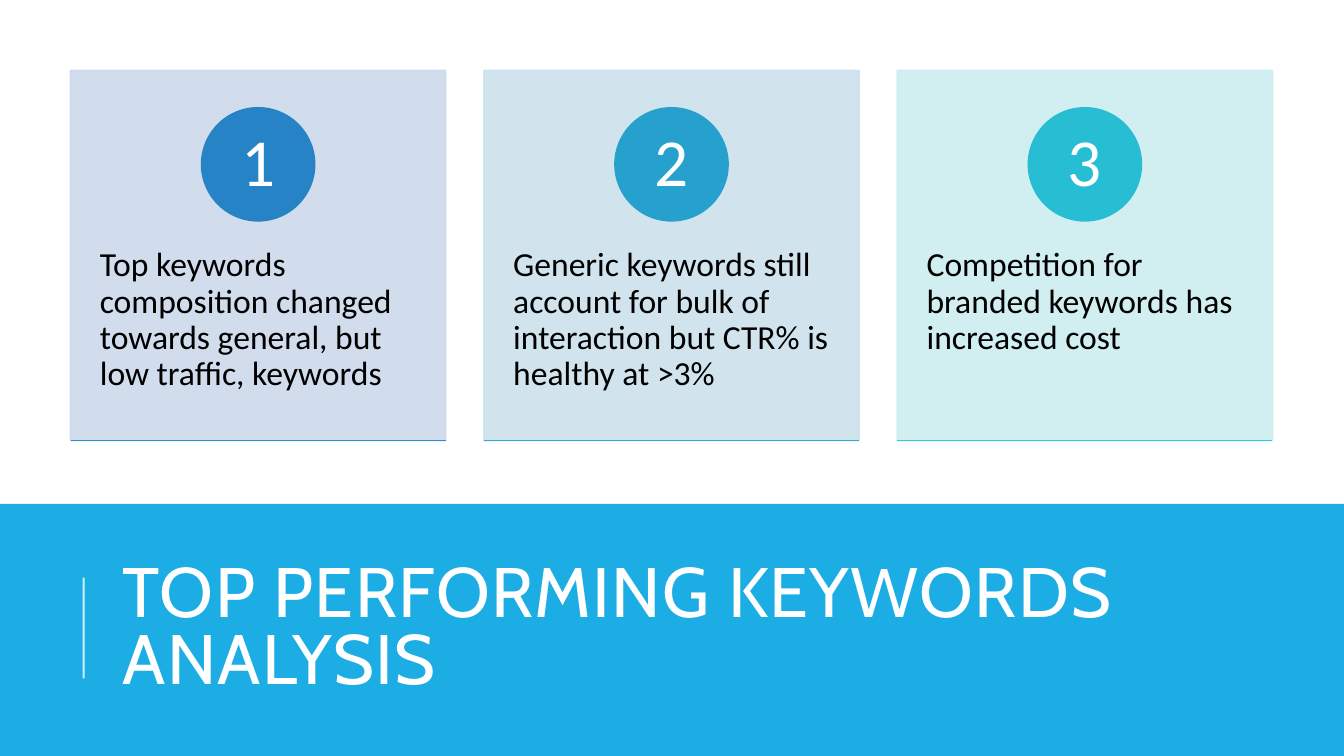
from dataclasses import dataclass

from lxml import etree
from pptx import Presentation
from pptx import util as u
from pptx.dml.color import RGBColor
from pptx.enum import shapes, text
from pptx.oxml.ns import qn


@dataclass(frozen=True)
class Theme:
    white: str = "FFFFFF"
    black: str = "000000"
    band: str = "1CADE4"
    heading_font: str = "Cabin"
    body_font: str = "Calibri"
    title_size: int = 50
    number_size: int = 48
    body_size: int = 24
    outline: float = 1.25
    divider: float = 1.5


CARDS = [  # text, card colour, circle colour, rule colour
    ("Top keywords composition changed towards general, but low traffic, keywords",
     "CDD9EA", "2683C6", "2691C9"),
    ("Generic keywords still account for bulk of interaction but CTR% is healthy at >3%",
     "CDE2ED", "26A0CD", "27AFD0"),
    ("Competition for branded keywords has increased cost",
     "CDEDF0", "27BED4", "27CED7"),
]

# All lengths are cells of a square grid, 75 rows to the slide's height.
ROWS, COLUMNS = 75, 133.33
MARGIN, PITCH = 7, 41
CARD_WIDTH, CARD_HEIGHT = 37.2, 36.7
CARD_INSETS = (2.9, 17.6, 2.9, 4.3)
CIRCLE_TOP, CIRCLE_SIZE = 10.7, 11.2
CIRCLE_INSETS = (0.9, 0.1, 0.9, 0.1)
BAND_TOP = 50


class SlideBuilder:
    def __init__(self, presentation, theme):
        self.theme = theme
        self.cell = presentation.slide_height / ROWS
        self.slide = presentation.slides.add_slide(presentation.slide_layouts[6])

    def cells(self, *lengths):
        return [u.Emu(round(length * self.cell)) for length in lengths]

    def paint(self, color_format, color, opacity=100):
        """Set a solid fill or line, with its opacity in percent."""
        color_format.solid()
        color_format.fore_color.rgb = RGBColor.from_string(color)
        if opacity < 100:
            element = color_format._xPr.find(qn("a:solidFill"))[0]
            etree.SubElement(element, qn("a:alpha"), val=str(opacity * 1000))

    def block(self, preset, box, color, opacity=100, outlined=True):
        shape = self.slide.shapes.add_shape(preset, *self.cells(*box))
        shape.shadow.inherit = False
        self.paint(shape.fill, color, opacity)
        if outlined:
            self.paint(shape.line.fill, color, opacity)
            shape.line.width = u.Pt(self.theme.outline)
        else:
            shape.line.fill.background()
        return shape

    def line(self, start, end, color, width, opacity=100):
        connector = self.slide.shapes.add_connector(
            shapes.MSO_CONNECTOR.STRAIGHT, *self.cells(*start, *end))
        self.paint(connector.line.fill, color, opacity)
        connector.line.width = u.Pt(width)
        etree.SubElement(connector._element.spPr, qn("a:effectLst"))

    def label(self, shape, words, font, size, color, insets, centred=False,
              anchor=text.MSO_ANCHOR.MIDDLE, line_spacing=0.9):
        frame = shape.text_frame
        frame.word_wrap = True
        frame.vertical_anchor = anchor
        (frame.margin_left, frame.margin_top,
         frame.margin_right, frame.margin_bottom) = self.cells(*insets)
        paragraph = frame.paragraphs[0]
        paragraph.alignment = text.PP_ALIGN.CENTER if centred else text.PP_ALIGN.LEFT
        paragraph.line_spacing = line_spacing
        run = paragraph.add_run()
        run.text = words
        run.font.name = font
        run.font.size = u.Pt(size)
        run.font.color.rgb = RGBColor.from_string(color)
        return run

    def title_band(self, words):
        theme = self.theme
        self.block(shapes.MSO_SHAPE.RECTANGLE,
                   (0, BAND_TOP, COLUMNS, ROWS - BAND_TOP), theme.band, outlined=False)
        self.line((8.3, 67.3), (8.3, 57.3), theme.white, theme.divider, opacity=80)
        title = self.slide.shapes.add_textbox(*self.cells(11.2, 54.4, 106.3, 16.4))
        run = self.label(title, words, theme.heading_font, theme.title_size,
                         theme.white, (1, 0.5, 1, 0.5), line_spacing=0.8)
        run.font._element.set("spc", "100")

    def card(self, index, words, card_color, circle_color, rule_color):
        theme = self.theme
        left = MARGIN + index * PITCH
        bottom = MARGIN + CARD_HEIGHT
        panel = self.block(shapes.MSO_SHAPE.RECTANGLE,
                           (left, MARGIN, CARD_WIDTH, CARD_HEIGHT), card_color, opacity=90)
        self.label(panel, words, theme.body_font, theme.body_size, theme.black,
                   CARD_INSETS, anchor=text.MSO_ANCHOR.TOP)
        circle_left = left + (CARD_WIDTH - CIRCLE_SIZE) / 2
        circle = self.block(shapes.MSO_SHAPE.OVAL,
                            (circle_left, CIRCLE_TOP, CIRCLE_SIZE, CIRCLE_SIZE), circle_color)
        self.label(circle, str(index + 1), theme.body_font, theme.number_size,
                   theme.white, CIRCLE_INSETS, centred=True)
        self.line((left, bottom), (left + CARD_WIDTH, bottom), rule_color, theme.outline)


def main():
    presentation = Presentation()
    presentation.slide_width, presentation.slide_height = u.Inches(13.33), u.Inches(7.5)
    builder = SlideBuilder(presentation, Theme())
    builder.title_band("TOP PERFORMING KEYWORDS ANALYSIS")
    for index, card in enumerate(CARDS):
        builder.card(index, *card)
    presentation.save("out.pptx")


if __name__ == "__main__":
    main()
